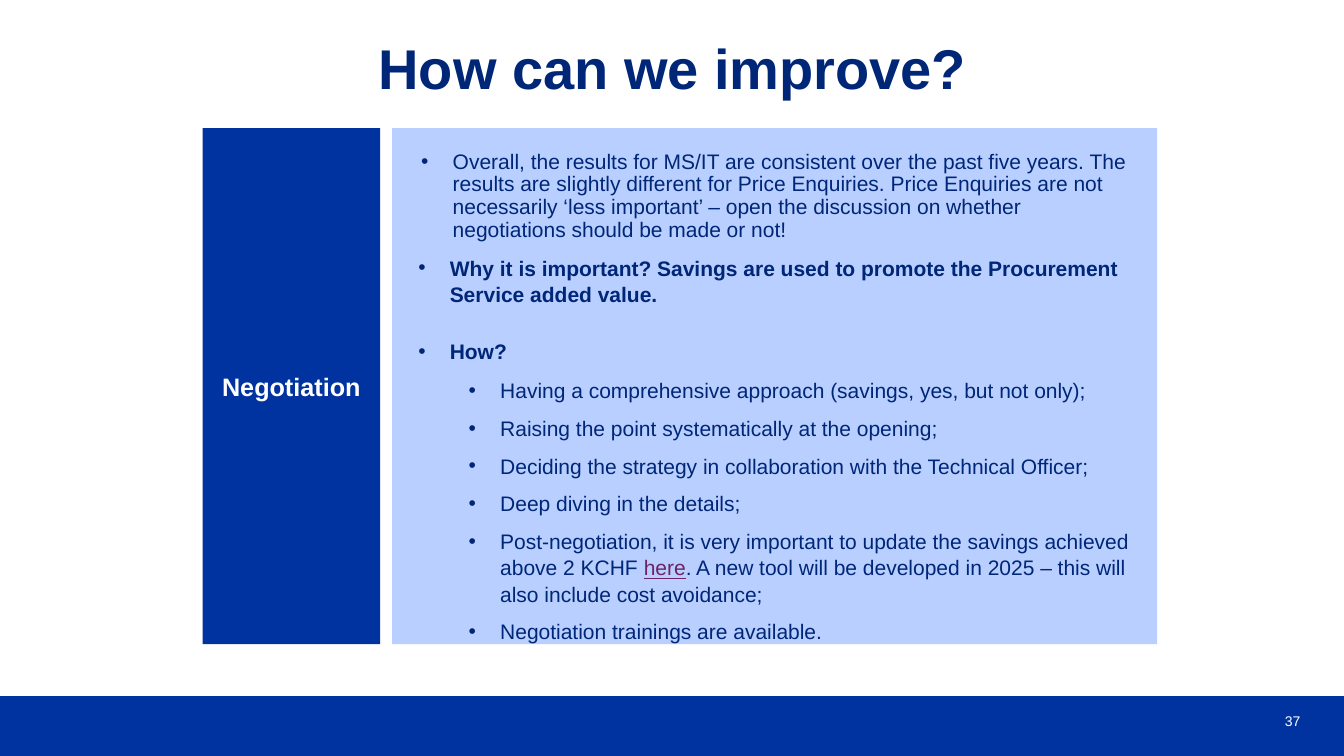
from dataclasses import dataclass

from lxml.etree import SubElement
from pptx import Presentation
from pptx.dml.color import RGBColor
from pptx.enum.shapes import MSO_SHAPE as Shape
from pptx.enum.text import MSO_ANCHOR as Anchor, MSO_AUTO_SIZE as Fit, PP_ALIGN as Align
from pptx.oxml.ns import qn
from pptx.util import Pt

BLUE = RGBColor(0x00, 0x33, 0xA0)
NAVY = RGBColor(0x00, 0x26, 0x78)
PALE = RGBColor(0xB9, 0xCF, 0xFF)
PLUM = RGBColor(0x6D, 0x24, 0x66)
WHITE = RGBColor(0xFF, 0xFF, 0xFF)
HANG = 22.5


@dataclass(frozen=True)
class Box:
    left: float
    top: float
    width: float
    height: float

    def args(self):
        return Pt(self.left), Pt(self.top), Pt(self.width), Pt(self.height)


@dataclass(frozen=True)
class Point:
    text: str
    level: int = 0
    link: str = ""
    tail: str = ""


INTRO = Point(
    "Overall, the results for MS/IT are consistent over the past five years. "
    "The results are slightly different for Price Enquiries. Price Enquiries are "
    "not necessarily ‘less important’ – open the discussion on whether "
    "negotiations should be made or not!")
POINTS = [
    Point("Why it is important? Savings are used to promote the Procurement "
          "Service added value."),
    Point("How?"),
    Point("Having a comprehensive approach (savings, yes, but not only);", 1),
    Point("Raising the point systematically at the opening;", 1),
    Point("Deciding the strategy in collaboration with the Technical Officer;", 1),
    Point("Deep diving in the details;", 1),
    Point("Post-negotiation, it is very important to update the savings achieved "
          "above 2 KCHF ", 1, "here",
          ". A new tool will be developed in 2025 – this will also include cost "
          "avoidance;"),
    Point("Negotiation trainings are available.", 1),
]


def style(para, size: float, color: RGBColor, bold: bool = False) -> None:
    font = para.font
    font.name, font.size, font.bold = "Arial", Pt(size), bold
    font.color.rgb = color


def panel(slide, box: Box, color: RGBColor):
    shape = slide.shapes.add_shape(Shape.RECTANGLE, *box.args())
    shape.shadow.inherit = False
    shape.fill.solid()
    shape.fill.fore_color.rgb = color
    shape.line.fill.background()
    return shape


def strip(frame) -> None:
    """Set all four insets to zero."""
    frame.margin_left = frame.margin_top = 0
    frame.margin_right = frame.margin_bottom = 0


def add_text(slide, box: Box):
    frame = slide.shapes.add_textbox(*box.args()).text_frame
    frame.word_wrap = True
    return frame


def bullet(para, point: Point, bold: bool) -> None:
    props = para._p.get_or_add_pPr()
    props.set("marL", str(Pt(HANG + 36 * point.level)))
    props.set("indent", str(-Pt(HANG)))
    SubElement(props, qn("a:buFont"), typeface="Arial")
    SubElement(props, qn("a:buChar"), char="•")
    para.level = point.level
    para.add_run().text = point.text
    if point.link:
        link = para.add_run()
        link.text = point.link
        link.font.underline = True
        link.font.color.rgb = PLUM
        para.add_run().text = point.tail
    style(para, 15, NAVY, bold)


def fill_list(frame) -> None:
    strip(frame)
    for i, point in enumerate(POINTS):
        para = frame.add_paragraph() if i else frame.paragraphs[0]
        bullet(para, point, point.level == 0)
        para.line_spacing = 1.05
        if i:
            para.space_before = Pt(5 if point.level else 18)
        para.space_after = Pt(3 if point.level else 4)


def main() -> None:
    deck = Presentation()
    deck.slide_width, deck.slide_height = Pt(960), Pt(540)
    slide = deck.slides.add_slide(deck.slide_layouts[5])

    title = slide.shapes.title
    title.left, title.top, title.width, title.height = Box(32.4, 29.5, 895.7, 84.2).args()
    frame = title.text_frame
    frame.text = "How can we improve?"
    frame.auto_size = Fit.NONE
    frame.vertical_anchor = Anchor.TOP
    strip(frame)
    head = frame.paragraphs[0]
    head.alignment, head.line_spacing = Align.CENTER, 0.9
    style(head, 40, NAVY, True)

    panel(slide, Box(0, 497.3, 960, 42.7), BLUE)
    label = panel(slide, Box(144.7, 91.5, 126.8, 368.6), BLUE).text_frame
    label.text = "Negotiation"
    label.word_wrap = True
    label.vertical_anchor = Anchor.MIDDLE
    label.paragraphs[0].alignment = Align.CENTER
    style(label.paragraphs[0], 18, WHITE, True)
    panel(slide, Box(280.1, 91.5, 546.4, 368.6), PALE)

    fill_list(add_text(slide, Box(298.8, 181.4, 521.3, 231.8)))
    intro = add_text(slide, Box(293.8, 104.4, 521.3, 74.9)).paragraphs[0]
    bullet(intro, INTRO, False)
    intro.line_spacing = 0.9

    number = add_text(slide, Box(874.8, 500.4, 54, 28.8))
    strip(number)
    number.text = "37"
    number.vertical_anchor = Anchor.MIDDLE
    number.paragraphs[0].alignment = Align.RIGHT
    style(number.paragraphs[0], 10, WHITE)

    deck.save("out.pptx")


if __name__ == "__main__":
    main()
